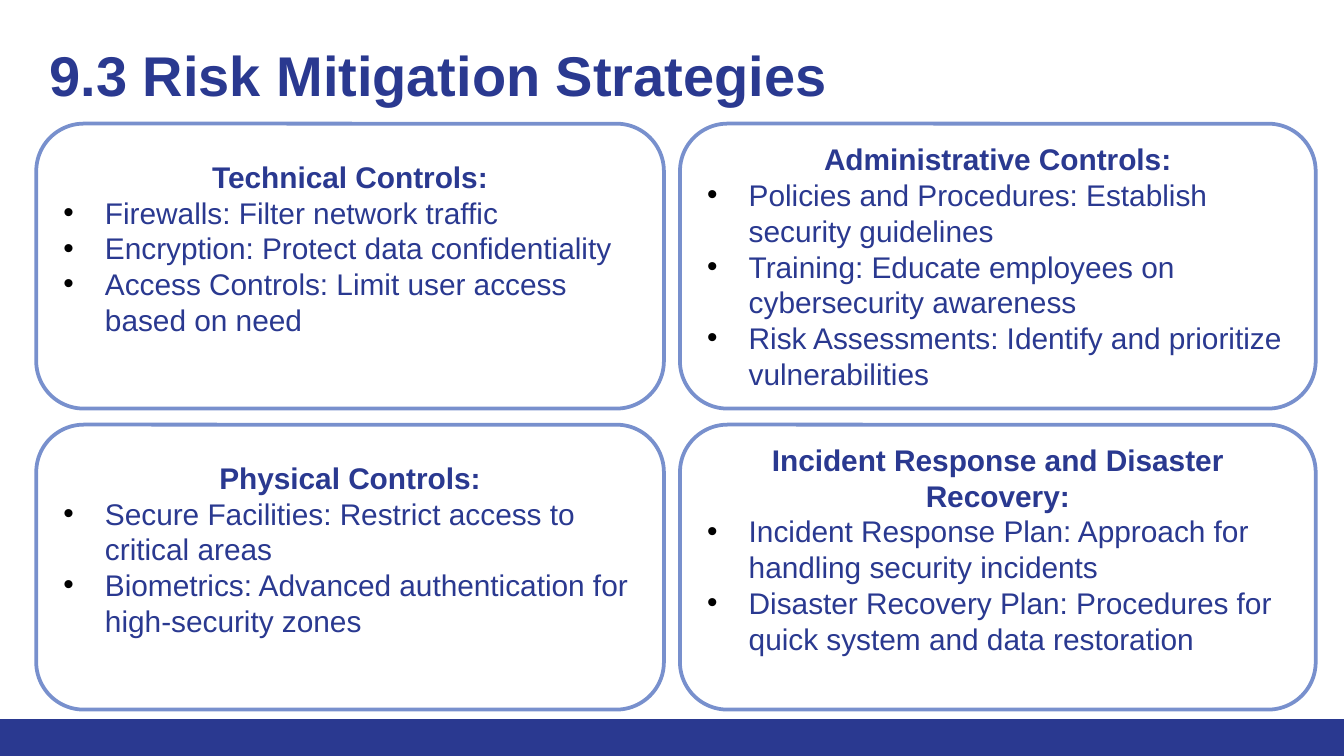
from lxml.etree import SubElement
from pptx import Presentation
from pptx.dml.color import RGBColor
from pptx.enum.shapes import MSO_SHAPE as Shape
from pptx.enum.text import MSO_ANCHOR as Anchor, PP_ALIGN as Align
from pptx.oxml.ns import qn
from pptx.util import Inches, Pt

NAVY = RGBColor(0x2A, 0x39, 0x90)
PERIWINKLE = RGBColor(0x78, 0x90, 0xCD)
WHITE = RGBColor(0xFF, 0xFF, 0xFF)
BLACK = RGBColor(0x00, 0x00, 0x00)

COLUMNS = [(0.27, 4.67), (5.06, 4.73)]
ROW_TOP, ROW_HEIGHT, ROW_STEP = 0.92, 2.12, 2.24
INSET, EMPTY_LINE = 0.05, 0.27

CONTROLS = [
    ("Technical Controls:", [
        "Firewalls: Filter network traffic",
        "Encryption: Protect data confidentiality",
        "Access Controls: Limit user access based on need",
    ], EMPTY_LINE),
    ("Administrative Controls:", [
        "Policies and Procedures: Establish security guidelines",
        "Training: Educate employees on cybersecurity awareness",
        "Risk Assessments: Identify and prioritize vulnerabilities",
    ], 0),
    ("Physical Controls:", [
        "Secure Facilities: Restrict access to critical areas",
        "Biometrics: Advanced authentication for high-security zones",
    ], EMPTY_LINE),
    ("Incident Response and Disaster Recovery:", [
        "Incident Response Plan: Approach for handling security incidents",
        "Disaster Recovery Plan: Procedures for quick system and data restoration",
    ], EMPTY_LINE),
]


def style_text(para, size, bold):
    for span in para.runs:
        span.font.name = "Arial"
        span.font.size = Pt(size)
        span.font.bold = bold
        span.font.color.rgb = NAVY


def add_bullet(para):
    props = para._p.get_or_add_pPr()
    props.set("marL", str(Inches(0.31)))
    props.set("indent", str(-Inches(0.31)))
    color = SubElement(props, qn("a:buClr"))
    SubElement(color, qn("a:srgbClr"), val=str(BLACK))
    SubElement(props, qn("a:buFont"), typeface="Arial")
    SubElement(props, qn("a:buChar"), char="•")


deck = Presentation()
deck.slide_width = Inches(10)
deck.slide_height = Inches(10) * 9 // 16
page = deck.slides.add_slide(deck.slide_layouts[6])

footer_top = Inches(5.35)
footer = page.shapes.add_shape(
    Shape.RECTANGLE, 0, footer_top, deck.slide_width, deck.slide_height - footer_top)
footer.shadow.inherit = False
footer.fill.solid()
footer.fill.fore_color.rgb = NAVY
footer.line.fill.background()

title = page.shapes.add_textbox(
    Inches(0.27), Inches(0.2), Inches(9.2), Inches(0.89))
frame = title.text_frame
frame.word_wrap = True
frame.margin_left = frame.margin_right = Inches(0.1)
frame.margin_top = frame.margin_bottom = Inches(0.1)
frame.text = "9.3 Risk Mitigation Strategies"
style_text(frame.paragraphs[0], 30, True)

for index, (heading, measures, space_below) in enumerate(CONTROLS):
    row, column = divmod(index, 2)
    left, width = COLUMNS[column]
    card = page.shapes.add_shape(
        Shape.ROUNDED_RECTANGLE, Inches(left), Inches(ROW_TOP + row * ROW_STEP),
        Inches(width), Inches(ROW_HEIGHT))
    card.shadow.inherit = False
    card.fill.solid()
    card.fill.fore_color.rgb = WHITE
    card.line.color.rgb = PERIWINKLE
    card.line.width = Pt(2)

    frame = card.text_frame
    frame.word_wrap = True
    frame.vertical_anchor = Anchor.MIDDLE
    frame.margin_bottom = Inches(INSET + space_below)
    frame.text = heading
    frame.paragraphs[0].alignment = Align.CENTER
    style_text(frame.paragraphs[0], 16, True)
    for measure in measures:
        para = frame.add_paragraph()
        para.text = measure
        para.alignment = Align.LEFT
        add_bullet(para)
        style_text(para, 16, False)

deck.save("out.pptx")
